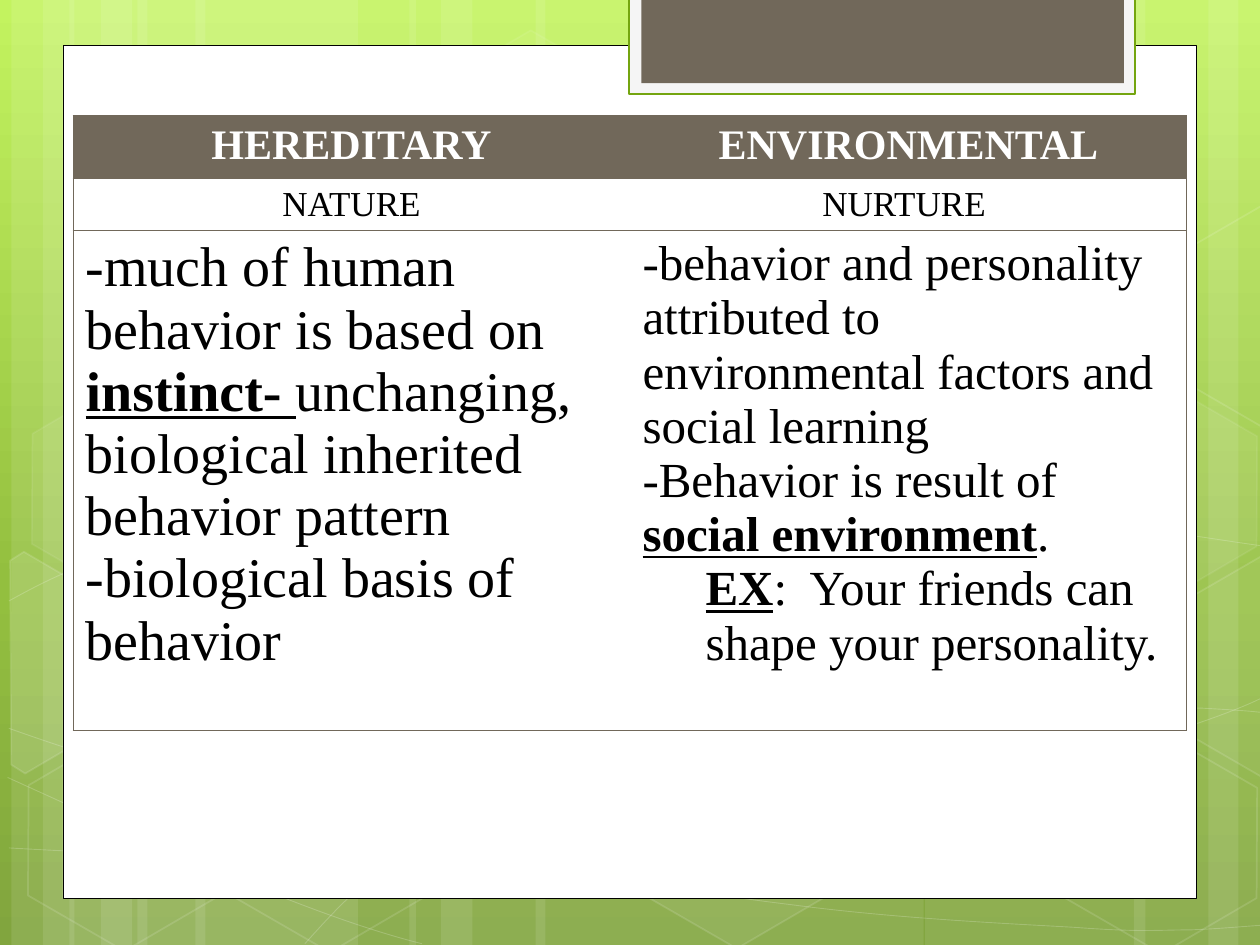
"""Build the slide that compares hereditary and environmental influences."""
from copy import deepcopy

from lxml import etree
from pptx import Presentation
from pptx.dml.color import RGBColor
from pptx.enum import shapes, text
from pptx.oxml.ns import qn
from pptx.util import Inches, Pt

WHITE, BLACK, BROWN, GREEN = "FFFFFF", "000000", "71685A", "74A510"
NO_GRID_STYLE = "{2D5ABB26-0587-4C30-8999-92F81FD0307C}"
STRONG = {"bold": True, "underline": True}

PANELS = [(1.09, 1.75), (0.09, 0.5), (0.34, 0.83), (1.55, 1.75), (0.55, 0.5), (0.8, 0.83),
          (7.34, 1.75), (9.59, 0.5), (9, 0.83), (4.25, 3.08), (3.25, 0.5), (3.5, 0.83)]

CURVES = [
    [(0.07, 6.73), (0.61, 6.76), (1.15, 6.79), (1.9, 6.78), (2.65, 6.77), (3.58, 6.75),
     (4.58, 6.65), (5.58, 6.55), (7, 6.36), (7.92, 6.17), (8.83, 5.98), (9.77, 5.68),
     (10.07, 5.51)],
    [(0.07, 4.77), (0.36, 4.61), (0.65, 4.46), (1.21, 4.31), (1.78, 4.16), (2.59, 3.94),
     (3.47, 3.87), (4.36, 3.8), (5.44, 3.79), (6.54, 3.87), (7.64, 3.95), (9.47, 4.26),
     (10.07, 4.34)],
    [(0.06, 6.17), (1.27, 6.72), (2.47, 7.27), (3.35, 7.49)],
    [(0.07, 5.78), (0.38, 5.89), (0.7, 6), (1.28, 6.16), (1.86, 6.31), (2.73, 6.56),
     (3.57, 6.73), (4.4, 6.9), (5.45, 7.08), (6.28, 7.18), (7.11, 7.29), (8, 7.33),
     (8.53, 7.36), (9.06, 7.4), (9.19, 7.38), (9.45, 7.38), (9.71, 7.37), (9.89, 7.35),
     (10.07, 7.34)],
    [(2.42, 7.49), (2.6, 7.29), (2.78, 7.09), (3.02, 6.91), (3.26, 6.72), (3.6, 6.53),
     (3.88, 6.39), (4.16, 6.25), (4.33, 6.19), (4.69, 6.09), (5.06, 5.99), (5.73, 5.85),
     (6.08, 5.78), (6.44, 5.71), (6.49, 5.71), (6.8, 5.69), (7.11, 5.66), (7.6, 5.63),
     (7.94, 5.62), (8.29, 5.61), (8.86, 5.62), (8.86, 5.62), (9.53, 5.62), (9.71, 5.63),
     (9.88, 5.64), (9.97, 5.65), (10.06, 5.66), (10.03, 5.65), (10.06, 5.66)],
]
STRAIGHT_END = (9.53, 5.62)

HEXAGONS = [(3.34, 0.36, 4, 8), (4.97, 5.89, 6, 12), (0.11, 5.91, None, 12),
            (0.14, 3.12, 7, 8), (1.74, 5.92, None, 12), (7.53, 4.53, 10, 12),
            (8.34, 5.93, None, 12), (8.34, 3.14, 7, 8)]

CUT_HEXAGONS = [
    (10, [(0.08, 4.45), (0.19, 4.38), (0.96, 4.83), (0.95, 5.7), (0.2, 6.14), (0.09, 6.07)]),
    (4, [(9.26, 4.85), (10.02, 4.41), (10.09, 4.46), (10.09, 6.13), (10.02, 6.17),
         (9.26, 5.73)]),
    (None, [(9.26, 2.07), (10.02, 1.63), (10.1, 1.68), (10.09, 3.35), (10.02, 3.39),
            (9.26, 2.95)]),
]

HEADER = {"size": 24, "bold": True, "colour": WHITE}
ROWS = [
    (0.5, BROWN, [(HEADER, [["HEREDITARY"]]), (HEADER, [["ENVIRONMENTAL"]])]),
    (0.41, None, [({"size": 20}, [["NATURE"]]), ({"size": 20}, [["NURTURE "]])]),
    (3.97, None, [
        ({"size": 32}, [
            ["-much of human behavior is based on", (" instinct- ", STRONG),
             "unchanging, biological inherited behavior pattern"],
            ["-biological basis of behavior"]]),
        ({"size": 28}, [
            ["-behavior and personality attributed to environmental factors and social learning"],
            ["-Behavior is result of ", ("social environment", STRONG), "."],
            [("EX", STRONG), ":  Your friends can shape your personality."]])]),
]


def paint(fill, colour, opacity=100):
    """Give a fill one solid colour, or none, at a percentage of opacity."""
    if colour is None:
        fill.background()
        return
    fill.solid()
    fill.fore_color.rgb = RGBColor.from_string(colour)
    if opacity < 100:
        node = fill._xPr.find(".//" + qn("a:srgbClr"))
        etree.SubElement(node, qn("a:alpha"), val=str(opacity * 1000))


def style(shape, fill=None, opacity=100, line=None, width=1, line_opacity=100):
    """Set the fill and outline of a shape and drop its shadow."""
    shape.shadow.inherit = False
    paint(shape.fill, fill, opacity)
    paint(shape.line.fill, line, line_opacity)
    if line:
        shape.line.width = Pt(width)


def add_preset(slide, kind, box, **look):
    """Add a preset shape in a box given in inches."""
    shape = slide.shapes.add_shape(kind, *map(Inches, box))
    style(shape, **look)
    return shape


def add_outline(slide, points, close, **look):
    """Add a freeform through points given in inches."""
    points = [(Inches(x), Inches(y)) for x, y in points]
    builder = slide.shapes.build_freeform(*points[0])
    builder.add_line_segments(points[1:], close=close)
    shape = builder.convert_to_shape()
    style(shape, **look)
    return shape


def add_curve(slide, points):
    """Add a faint line whose points form cubic segments, save one straight part."""
    shape = add_outline(slide, points, False, line=WHITE, width=0.5, line_opacity=20)
    segments = list(shape._element.iter(qn("a:lnTo")))
    position = 0
    while position < len(segments):
        if points[position + 1] == STRAIGHT_END:
            position += 1
            continue
        cubic = etree.Element(qn("a:cubicBezTo"))
        segments[position].addprevious(cubic)
        for segment in segments[position:position + 3]:
            cubic.append(segment[0])
            segment.getparent().remove(segment)
        position += 3


def set_background(slide):
    """Fill the background with a green gradient from top to bottom."""
    fill = slide.background.fill
    fill.gradient()
    fill.gradient_angle = 270
    stop_list = fill._xPr.find(".//" + qn("a:gsLst"))
    stop_list.insert(1, deepcopy(stop_list[0]))
    stops = [(0, "C3F35F"), (0.62, "93BF3F"), (1, "81A53E")]
    for stop, (position, colour) in zip(fill.gradient_stops, stops):
        stop.position = position
        stop.color.rgb = RGBColor.from_string(colour)


def add_decoration(slide):
    """Add the translucent panels, curves and hexagons."""
    for left, width in PANELS:
        add_preset(slide, shapes.MSO_SHAPE.RECTANGLE, (left, 0, width, 7.5),
                   fill=WHITE, opacity=10)
    for points in CURVES:
        add_curve(slide, points)
    for left, top, opacity, line_opacity in HEXAGONS:
        hexagon = add_preset(slide, shapes.MSO_SHAPE.HEXAGON, (left, top, 1.75, 1.52),
                             fill=WHITE if opacity else None, opacity=opacity or 100,
                             line=WHITE, line_opacity=line_opacity)
        hexagon.adjustments[0] = 0.285
        hexagon.rotation = 30
    for opacity, points in CUT_HEXAGONS:
        add_outline(slide, points, True, fill=WHITE if opacity else None,
                    opacity=opacity or 100, line=WHITE, line_opacity=12)


def add_border(cell, sides):
    """Draw thin brown lines on the given sides of a cell."""
    properties = cell._tc.get_or_add_tcPr()
    for side in sides:
        line = etree.SubElement(properties, qn("a:ln" + side), w=str(Pt(0.75)))
        solid = etree.SubElement(line, qn("a:solidFill"))
        etree.SubElement(solid, qn("a:srgbClr"), val=BROWN)


def write_paragraph(paragraph, runs, size, bold=False, colour=BLACK):
    """Write runs, each plain text or text with its own font values."""
    for item in runs:
        words, extra = item if isinstance(item, tuple) else (item, {})
        run = paragraph.add_run()
        run.text = words
        values = {"name": "Times New Roman", "size": Pt(size), "bold": bold, **extra}
        for name, value in values.items():
            setattr(run.font, name, value)
        run.font.color.rgb = RGBColor.from_string(colour)


def add_comparison(slide):
    """Add the table that sets nature against nurture."""
    box = map(Inches, (0.58, 0.92, 8.84, sum(row[0] for row in ROWS)))
    table = slide.shapes.add_table(len(ROWS), 2, *box).table
    table._tbl.tblPr.find(qn("a:tableStyleId")).text = NO_GRID_STYLE
    table.horz_banding = False
    for index, (height, fill, cells) in enumerate(ROWS):
        table.rows[index].height = Inches(height)
        for column, (look, paragraphs) in enumerate(cells):
            cell = table.cell(index, column)
            add_border(cell, ("LR"[column],) + (("T",), ("T", "B"), ("B",))[index])
            paint(cell.fill, fill)
            frame = cell.text_frame
            for number, runs in enumerate(paragraphs):
                paragraph = frame.add_paragraph() if number else frame.paragraphs[0]
                write_paragraph(paragraph, runs, **look)
                if index < 2:
                    paragraph.alignment = text.PP_ALIGN.CENTER
    example = table.cell(2, 1).text_frame.paragraphs[-1]
    example.level = 1
    example._p.get_or_add_pPr().set("marL", str(Inches(0.5)))


def main():
    """Build and save the presentation."""
    presentation = Presentation()
    presentation.slide_width, presentation.slide_height = Inches(10), Inches(7.5)
    slide = presentation.slides.add_slide(presentation.slide_layouts[6])
    set_background(slide)
    add_decoration(slide)
    rectangle = shapes.MSO_SHAPE.RECTANGLE
    add_preset(slide, rectangle, (0.5, 0.36, 9, 6.77), fill=WHITE, line=BLACK, width=0.5)
    add_preset(slide, rectangle, (4.99, -0.02, 4.02, 0.77), fill="F5F5F5", line=GREEN, width=1.25)
    add_preset(slide, rectangle, (5.09, -0.02, 3.83, 0.68), fill=BROWN)
    add_comparison(slide)
    presentation.save("out.pptx")


if __name__ == "__main__":
    main()
